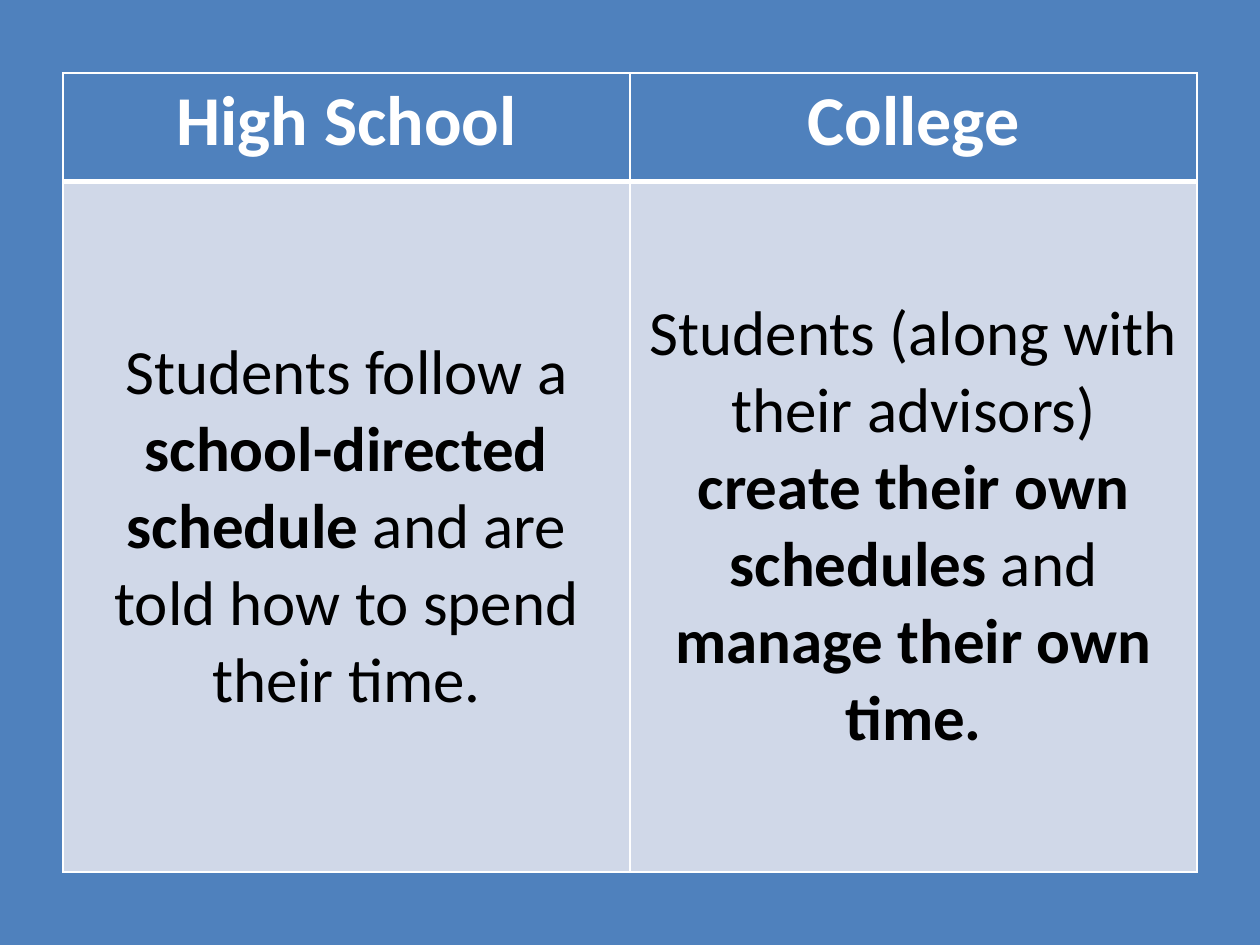
from lxml.etree import SubElement
from pptx import Presentation
from pptx.dml.color import RGBColor as Rgb
from pptx.enum.text import MSO_ANCHOR as Anchor, PP_ALIGN as Align
from pptx.oxml.ns import qn
from pptx.util import Inches, Pt

BLUE, PALE, WHITE, BLACK = "4F81BD", "D0D8E8", "FFFFFF", "000000"
HEAD = {"size": Pt(40), "name": "Calibri"}
BODY = {"size": Pt(36), "name": "Calibri"}

# Each cell is a list of (text, bold) runs
HEADS = [[("High School", True)], [("College", True)]]
TEXTS = [
    [("Students follow a ", False),
     ("school-directed schedule ", True),
     ("and are told how to spend their time.", False)],
    [("Students (along with their advisors) ", False),
     ("create their own schedules ", True),
     ("and ", False),
     ("manage their own time.", True)],
]


def paint(fill, color):
    fill.solid()
    fill.fore_color.rgb = Rgb.from_string(color)


def edge(cell, widths):
    """Draw white borders; they must precede the fill in tcPr."""
    props = cell._tc.get_or_add_tcPr()
    for side, width in widths.items():
        line = SubElement(props, qn(f"a:ln{side}"), w=str(Pt(width)))
        fill = SubElement(line, qn("a:solidFill"))
        SubElement(fill, qn("a:srgbClr"), val=WHITE)


def write(cell, runs, style, color):
    para = cell.text_frame.paragraphs[0]
    para.alignment = Align.CENTER
    for text, bold in runs:
        run = para.add_run()
        run.text = text
        for key, value in {**style, "bold": bold}.items():
            setattr(run.font, key, value)
        run.font.color.rgb = Rgb.from_string(color)


def add_row(table, row, texts, style, color, back, anchor, widths):
    for col, runs in enumerate(texts):
        cell = table.cell(row, col)
        cell.vertical_anchor = anchor
        edge(cell, widths)
        paint(cell.fill, back)
        write(cell, runs, style, color)


def add_grid(slide):
    frame = slide.shapes.add_table(2, 2, Inches(0.5), Inches(0.58),
                                   Inches(9), Inches(6.34))
    table = frame.table
    for row, high in zip(table.rows, (0.86, 5.48)):
        row.height = Inches(high)
    # Header row, with a thick rule below it
    add_row(table, 0, HEADS, HEAD, WHITE, BLUE, Anchor.TOP,
            {"L": 1, "R": 1, "T": 1, "B": 3})
    # Body row
    add_row(table, 1, TEXTS, BODY, BLACK, PALE, Anchor.MIDDLE,
            {"L": 1, "R": 1, "T": 3, "B": 1})


def main():
    deck = Presentation()
    deck.slide_width, deck.slide_height = Inches(10), Inches(7.5)
    slide = deck.slides.add_slide(deck.slide_layouts[6])
    paint(slide.background.fill, BLUE)
    add_grid(slide)
    deck.save("out.pptx")


if __name__ == "__main__":
    main()
